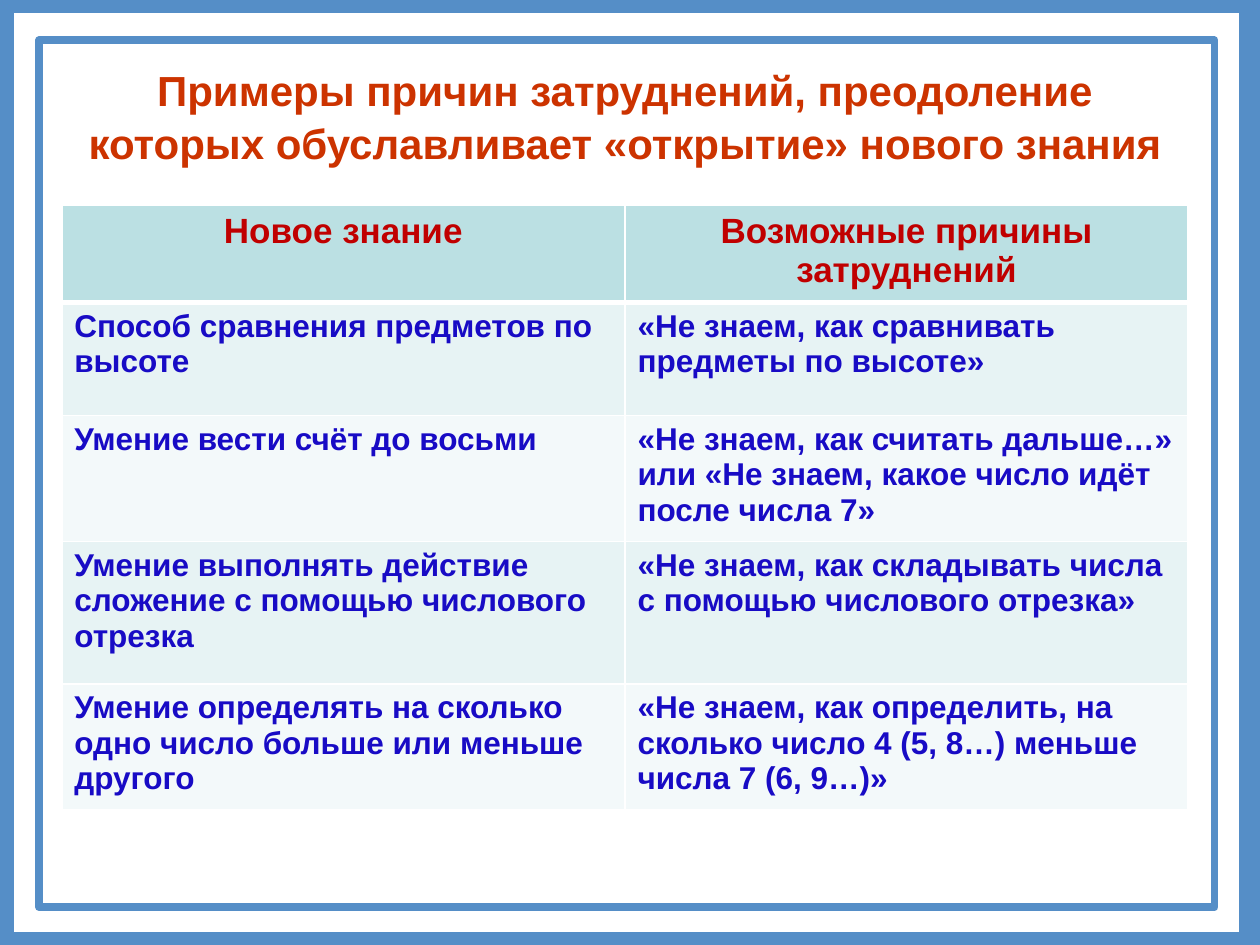
from lxml import etree
from pptx import Presentation
from pptx.dml.color import RGBColor
from pptx.enum.shapes import MSO_SHAPE
from pptx.enum.text import PP_ALIGN
from pptx.oxml.ns import qn
from pptx.util import Inches, Pt

RECT = MSO_SHAPE.RECTANGLE
LEFT, CENTER = PP_ALIGN.LEFT, PP_ALIGN.CENTER

BLUE = RGBColor(0x55, 0x8E, 0xC7)
ORANGE = RGBColor(0xCC, 0x33, 0x00)
RED = RGBColor(0xC0, 0x00, 0x00)
INK = RGBColor(0x18, 0x0B, 0xC5)
WHITE = RGBColor(0xFF, 0xFF, 0xFF)
HEAD_FILL = RGBColor(0xBB, 0xE0, 0xE3)
BAND_FILLS = (RGBColor(0xE7, 0xF3, 0xF4), RGBColor(0xF3, 0xF9, 0xFA))

W, H = 10, 7.5
TITLE = ("Примеры причин затруднений, преодоление которых "
         "обуславливает «открытие» нового знания")
ROW_HEIGHTS = (0.77, 0.9, 1, 1.13, 1)
# Each line of a cell's text is a paragraph
ROWS = (
    ("Новое знание", "Возможные причины затруднений"),
    ("Способ сравнения предметов по высоте",
     "«Не знаем, как сравнивать предметы по высоте»"),
    ("Умение вести счёт до восьми",
     "«Не знаем, как считать дальше…»\n"
     "или «Не знаем, какое число идёт после числа 7»"),
    ("Умение выполнять действие сложение с помощью числового отрезка",
     "«Не знаем, как складывать числа с помощью числового отрезка»"),
    ("Умение определять на сколько одно число больше или меньше другого",
     "«Не знаем, как определить, на сколько число 4 (5, 8…) меньше "
     "числа 7 (6, 9…)»"),
)


def put_text(tf, text, size, color, align=LEFT, spacing=None):
    tf.word_wrap = True
    for i, line in enumerate(text.split("\n")):
        p = tf.paragraphs[0] if i == 0 else tf.add_paragraph()
        p.alignment = align
        p.line_spacing = spacing
        r = p.add_run()
        r.text = line
        r.font.name = "Arial"
        r.font.size = Pt(size)
        r.font.bold = True
        r.font.color.rgb = color


def set_borders(cell, bottom):
    """Draw white cell borders, 1 pt except for the bottom one."""
    tc_pr = cell._tc.get_or_add_tcPr()
    sides = (("a:lnL", 1), ("a:lnR", 1), ("a:lnT", 1), ("a:lnB", bottom))
    for i, (tag, width) in enumerate(sides):
        ln = etree.Element(qn(tag), w=str(Pt(width)))
        fill = etree.SubElement(ln, qn("a:solidFill"))
        etree.SubElement(fill, qn("a:srgbClr"), val=str(WHITE))
        tc_pr.insert(i, ln)


def add_frame(s, box, width):
    sp = s.shapes.add_shape(RECT, *map(Inches, box))
    sp.shadow.inherit = False
    sp.fill.background()
    sp.line.color.rgb = BLUE
    sp.line.width = Pt(width)


def add_title(s, box):
    tf = s.shapes.add_textbox(*map(Inches, box)).text_frame
    put_text(tf, TITLE, 24, ORANGE, align=CENTER, spacing=1.05)


def add_reasons_table(s, box):
    shape = s.shapes.add_table(len(ROWS), len(ROWS[0]), *map(Inches, box))
    table = shape.table
    for col in table.columns:
        col.width = Inches(box[2] / len(ROWS[0]))
    for i, (texts, height) in enumerate(zip(ROWS, ROW_HEIGHTS)):
        table.rows[i].height = Inches(height)
        head = i == 0
        for j, text in enumerate(texts):
            cell = table.cell(i, j)
            cell.fill.solid()
            cell.fill.fore_color.rgb = HEAD_FILL if head else BAND_FILLS[(i - 1) % 2]
            set_borders(cell, bottom=3 if head else 1)
            if head:
                put_text(cell.text_frame, text, 20, RED, align=CENTER)
            else:
                put_text(cell.text_frame, text, 18, INK)


def main():
    prs = Presentation()
    prs.slide_width, prs.slide_height = Inches(W), Inches(H)
    s = prs.slides.add_slide(prs.slide_layouts[6])
    s.background.fill.solid()
    s.background.fill.fore_color.rgb = WHITE

    # Double frame around the slide
    add_frame(s, (0.01, 0, 9.93, H), 15)
    add_frame(s, (0.31, 0.32, 9.33, 6.88), 4.5)
    # Table, then the heading above it
    add_reasons_table(s, (0.49, 1.63, 8.94, sum(ROW_HEIGHTS)))
    add_title(s, (0.54, 0.44, 8.84, 0.91))

    prs.save("out.pptx")


if __name__ == "__main__":
    main()
